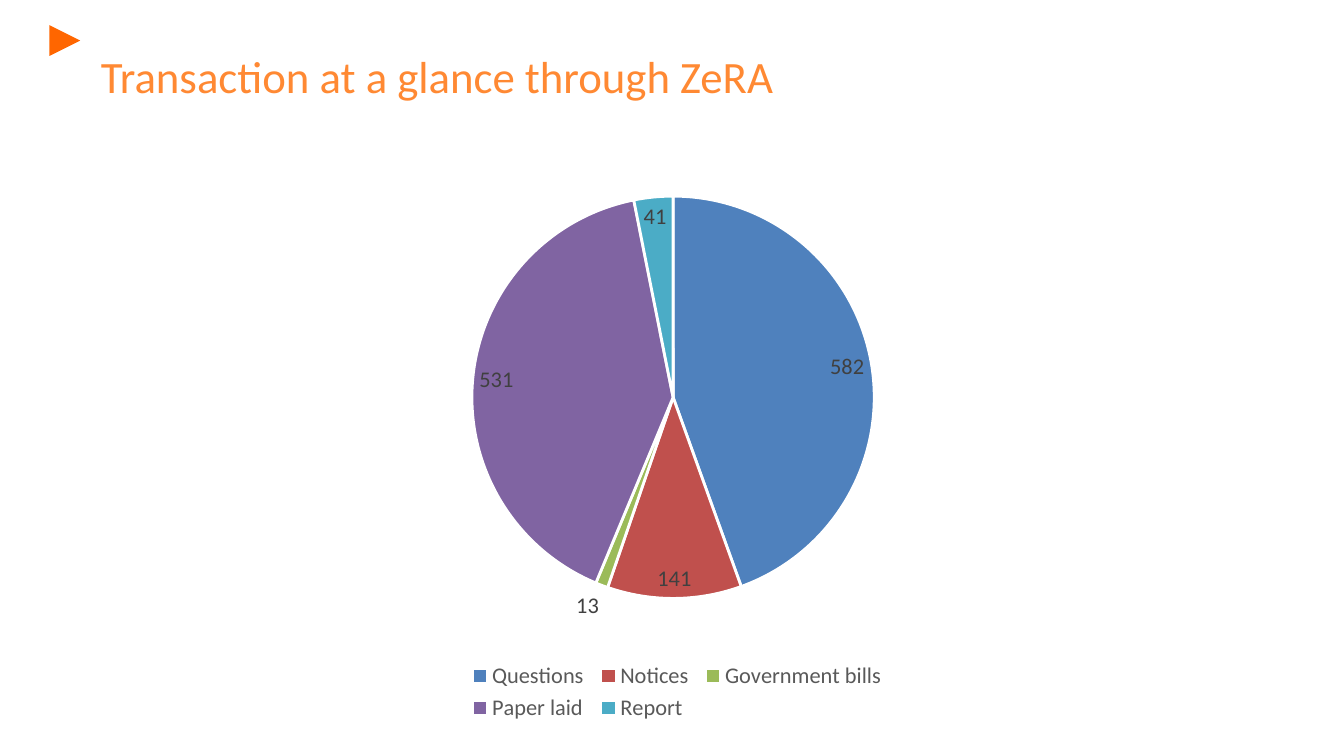
from lxml import etree
from pptx import Presentation
from pptx import util as u
from pptx.chart.data import CategoryChartData
from pptx.dml.color import RGBColor
from pptx.enum import chart as c
from pptx.oxml.ns import qn

Pt = u.Pt


def color(value):
    return RGBColor.from_string(value)


def set_layout(parent, index, **fractions):
    """Place a chart part by fractions of the chart area."""
    for old in parent.findall(qn("c:layout")):
        parent.remove(old)
    layout = etree.Element(qn("c:layout"))
    manual = etree.SubElement(layout, qn("c:manualLayout"))
    if parent.tag == qn("c:plotArea"):
        etree.SubElement(manual, qn("c:layoutTarget")).set("val", "inner")
    for mode in ("xMode", "yMode"):
        etree.SubElement(manual, qn("c:" + mode)).set("val", "edge")
    for name, value in fractions.items():
        etree.SubElement(manual, qn("c:" + name)).set("val", str(value))
    parent.insert(index, layout)


presentation = Presentation()
presentation.slide_width, presentation.slide_height = Pt(720), Pt(405)
slide = presentation.slides.add_slide(presentation.slide_layouts[6])

# Corner marker
builder = slide.shapes.build_freeform(Pt(26.5), Pt(13.5))
builder.add_line_segments([(Pt(26.5), Pt(30)), (Pt(43), Pt(21.75))], close=True)
marker = builder.convert_to_shape()
marker.shadow.inherit = False
marker.fill.solid()
marker.fill.fore_color.rgb = color("FF6600")
marker.line.fill.background()

# Title
title = slide.shapes.add_textbox(Pt(54), Pt(25.2), Pt(680), Pt(30))
frame_format = {"word_wrap": True, "margin_left": 0, "margin_right": 0,
                "margin_top": Pt(1), "margin_bottom": 0}
for name, value in frame_format.items():
    setattr(title.text_frame, name, value)
paragraph = title.text_frame.paragraphs[0]
paragraph.space_before = Pt(1)
run = paragraph.add_run()
run.text = "Transaction at a glance through ZeRA"
for name, value in {"name": "Calibri", "size": Pt(24)}.items():
    setattr(run.font, name, value)
run.font.color.rgb = color("FF8933")

# Pie chart
slices = [("Questions", 582, "4F81BD"), ("Notices", 141, "C0504D"),
          ("Government bills", 13, "9BBB59"), ("Paper laid", 531, "8064A2"),
          ("Report", 41, "4BACC6")]
data = CategoryChartData()
data.categories = [name for name, _, _ in slices]
data.add_series("Series 1", [value for _, value, _ in slices])
chart = slide.shapes.add_chart(c.XL_CHART_TYPE.PIE, Pt(133.2), Pt(77),
                               Pt(459.4), Pt(312.5), data).chart
chart.has_title = False
chart.has_legend = True
chart.legend.position = c.XL_LEGEND_POSITION.BOTTOM
chart.legend.include_in_layout = False

plot = chart.plots[0]
plot.vary_by_categories = True
for index, (_, _, fill) in enumerate(slices):
    point = plot.series[0].points[index]
    point.format.fill.solid()
    point.format.fill.fore_color.rgb = color(fill)
    point.format.line.color.rgb = color("FFFFFF")
    point.format.line.width = Pt(1.5)

# Value labels and fonts
plot.has_data_labels = True
plot.data_labels.show_value = True
plot.data_labels.show_percentage = False
plot.data_labels.position = c.XL_LABEL_POSITION.BEST_FIT
for font, size, value in ((chart.font, 10, "000000"),
                          (chart.legend.font, 12, "595959"),
                          (plot.data_labels.font, 12, "404040")):
    font.name, font.size = "Calibri", Pt(size)
    font.color.rgb = color(value)

# Pie centred above a two-row legend
plot_area = chart.element.find(".//" + qn("c:plotArea"))
legend = chart.element.find(".//" + qn("c:legend"))
set_layout(plot_area, 0, x=0.26, y=0.09, w=0.47, h=0.69)
set_layout(legend, 1, x=0.25, y=0.88, w=0.5, h=0.12)

presentation.save("out.pptx")
